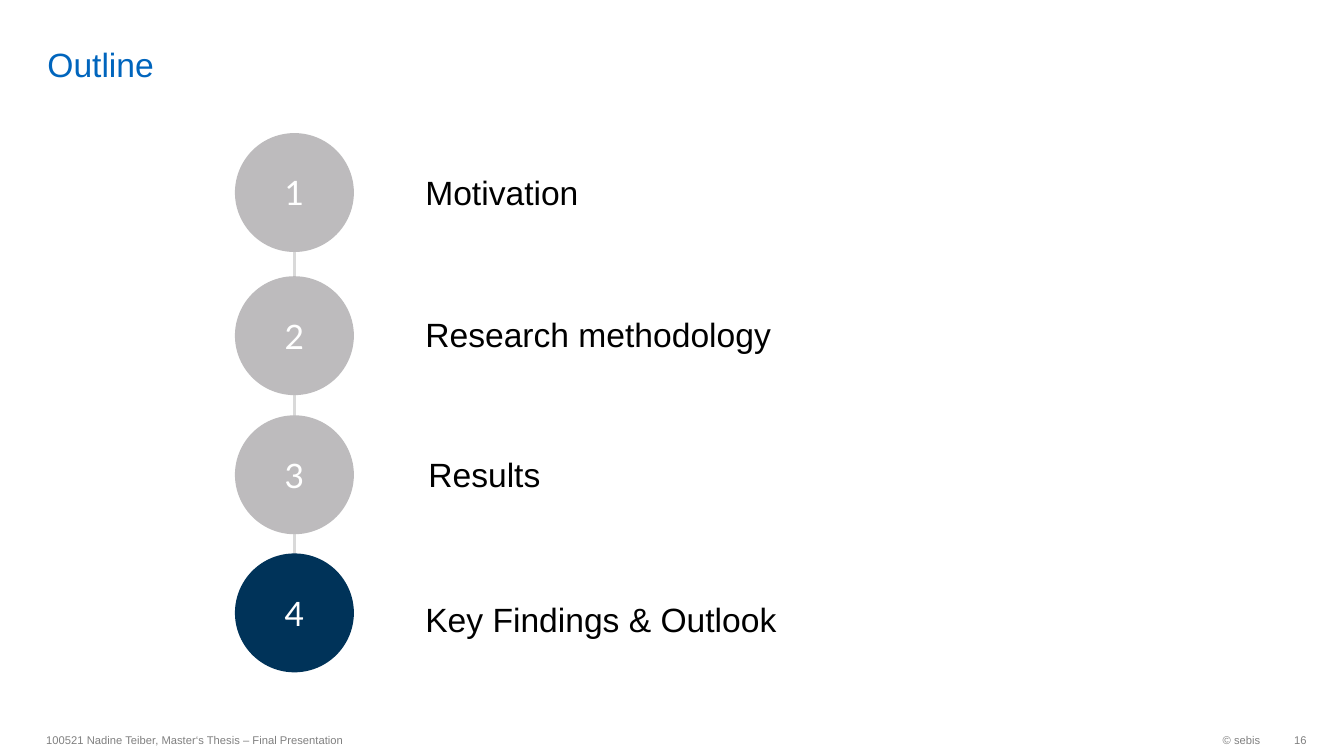
from pptx import Presentation
from pptx.dml.color import RGBColor
from pptx.enum.shapes import MSO_CONNECTOR as CONN, MSO_SHAPE as SHAPE
from pptx.enum.text import MSO_ANCHOR as ANCHOR, PP_ALIGN as ALIGN
from pptx.oxml.ns import qn
from pptx.util import Emu, Pt
from lxml import etree

W, H = 1333, 750
GRAY, NAVY, BLUE = "BDBBBD", "003359", "0065BD"
# name, circle top, label left, label drop below circle top
STEPS = [
    ("Motivation", 132, 412, 34),
    ("Research methodology", 274, 412, 33),
    ("Results", 412, 415, 33),
    ("Key Findings & Outlook", 549, 412, 40),
]
CURRENT = 4


def px(n):
    """Turn px, 100 to the inch, into EMU."""
    return Emu(n * 9144)


def rgb(value):
    return RGBColor.from_string(value)


def write(shape, text, size=24, font="Arial", color="000000", align=ALIGN.LEFT,
          anchor=ANCHOR.TOP, insets=(10, 5, 10, 5), wrap=True):
    tf = shape.text_frame
    tf.word_wrap = wrap
    tf.vertical_anchor = anchor
    tf.margin_left, tf.margin_top, tf.margin_right, tf.margin_bottom = map(px, insets)
    p = tf.paragraphs[0]
    p.alignment = align
    r = p.add_run()
    r.text = text
    r.font.size = Pt(size)
    r.font.name = font
    r.font.color.rgb = rgb(color)


def add_text(s, box, text, **fmt):
    write(s.shapes.add_textbox(*map(px, box)), text, **fmt)


def add_title(s, box, text):
    title = s.shapes.title
    title.left, title.top, title.width, title.height = map(px, box)
    write(title, text, color=BLUE, anchor=ANCHOR.BOTTOM, insets=(10, 0, 10, 0))


def add_spine(s, x, top, bottom):
    line = s.shapes.add_connector(CONN.STRAIGHT, px(x), px(top), px(x), px(bottom))
    line.line.color.rgb = rgb("D9D9D9")
    line.line.width = Pt(2)
    etree.SubElement(line._element.spPr, qn("a:effectLst"))


def add_circle(s, x, y, size, number, fill):
    circle = s.shapes.add_shape(SHAPE.OVAL, px(x), px(y), px(size), px(size))
    circle.shadow.inherit = False
    circle.fill.solid()
    circle.fill.fore_color.rgb = rgb(fill)
    circle.line.fill.background()
    write(circle, str(number), font="Lato", color="FFFFFF", align=ALIGN.CENTER,
          anchor=ANCHOR.MIDDLE)


def add_steps(s, left, size=118):
    """Numbered circles on a vertical line, each with its label."""
    add_spine(s, left + size // 2, STEPS[0][1] + size, STEPS[-1][1] + size // 2)
    for number, (name, top, label_left, drop) in enumerate(STEPS, 1):
        add_circle(s, left, top, size, number, NAVY if number == CURRENT else GRAY)
        add_text(s, (label_left, top + drop, 567, 50), name)


def add_footer(s, top, height):
    small = dict(size=8, color="808080", anchor=ANCHOR.MIDDLE)
    add_text(s, (36, top, 630, height),
             "100521 Nadine Teiber, Master‘s Thesis – Final Presentation", **small)
    small.update(align=ALIGN.RIGHT, wrap=False)
    add_text(s, (1026, top, 234, height), "© sebis", **small)
    add_text(s, (1260, top, 36, height), "16", insets=(10, 5, 0, 5), **small)


def main():
    prs = Presentation()
    prs.slide_width, prs.slide_height = px(W), px(H)
    s = prs.slides.add_slide(prs.slide_layouts[5])
    add_title(s, (37, 5, 1158, 79), "Outline")
    add_steps(s, 233)
    add_footer(s, 718, 32)
    prs.save("out.pptx")


if __name__ == "__main__":
    main()
